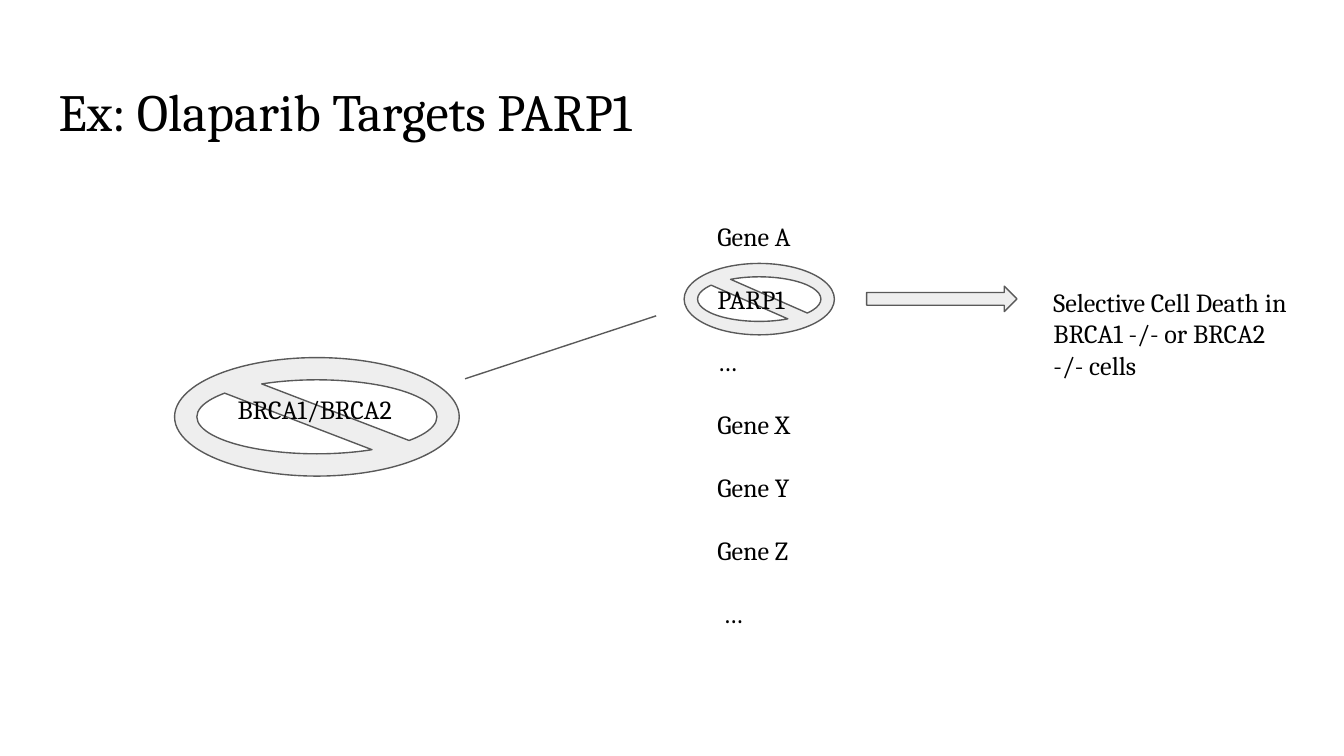
"""Build the slide on how Olaparib targets PARP1."""
from dataclasses import dataclass

from lxml import etree
from pptx import Presentation
from pptx.dml.color import RGBColor
from pptx.enum import shapes, text
from pptx.oxml import ns
from pptx.util import Cm, Pt


@dataclass(frozen=True)
class Theme:
    font: str = "Cambria"
    ink: RGBColor = RGBColor(0, 0, 0)
    fill: RGBColor = RGBColor(0xEE, 0xEE, 0xEE)
    edge: RGBColor = RGBColor(0x59, 0x59, 0x59)
    head: int = 28
    body: int = 14
    rule: float = 0.75
    inset: float = 0.25


theme = Theme()


def write(box, lines, size=theme.body, gap=0):
    frame = box.text_frame
    frame.word_wrap = True
    frame.auto_size = text.MSO_AUTO_SIZE.NONE
    frame.vertical_anchor = text.MSO_ANCHOR.TOP
    frame.margin_left = frame.margin_right = Cm(theme.inset)
    frame.margin_top = frame.margin_bottom = Cm(theme.inset)
    frame.text = "\n".join(lines)
    for row, para in enumerate(frame.paragraphs):
        para.alignment = text.PP_ALIGN.LEFT
        para.space_before = Pt(gap if row else 0)
        font = para.font
        font.name, font.size = theme.font, Pt(size)
        font.color.rgb = theme.ink


deck = Presentation()
deck.slide_width, deck.slide_height = Cm(25.4), Cm(14.29)
slide = deck.slides.add_slide(deck.slide_layouts[5])

title = slide.shapes.title
title.left, title.top = Cm(0.86), Cm(1.24)
title.width, title.height = Cm(23.67), Cm(1.6)
write(title, ["Ex: Olaparib Targets PARP1"], size=theme.head)

kind = shapes.MSO_SHAPE
signs = [
    (kind.NO_SYMBOL, (12.93, 4.98, 2.84, 1.35), [0.188]),
    (kind.NO_SYMBOL, (3.3, 6.76, 5.38, 2.24), [0.188]),
    (kind.RIGHT_ARROW, (16.38, 5.41, 2.84, 0.48), [0.5, 0.5]),
]
for form, spot, bends in signs:
    sign = slide.shapes.add_shape(form, *map(Cm, spot))
    for num, bend in enumerate(bends):
        sign.adjustments[num] = bend
    sign.shadow.inherit = False
    sign.fill.solid()
    sign.fill.fore_color.rgb = theme.fill
    sign.line.color.rgb = theme.edge
    sign.line.width = Pt(theme.rule)

link = slide.shapes.add_connector(
    shapes.MSO_CONNECTOR.STRAIGHT, Cm(8.79), Cm(7.16), Cm(12.4), Cm(5.97))
link.line.color.rgb = theme.edge
link.line.width = Pt(theme.rule)
etree.SubElement(link._element.spPr, ns.qn("a:effectLst"))

genes = ["Gene A", "PARP1", "…", "Gene X", "Gene Y", "Gene Z", " …"]
labels = [
    ((4.24, 7.19, 3.96, 1.35), ["BRCA1/BRCA2"], 0),
    ((13.31, 3.91, 3.56, 7.47), genes, 16.9),
    ((19.66, 5.16, 5.11, 0.94),
     ["Selective Cell Death in BRCA1 -/- or BRCA2 -/- cells"], 0),
]
for spot, lines, gap in labels:
    write(slide.shapes.add_textbox(*map(Cm, spot)), lines, gap=gap)

deck.save("out.pptx")
